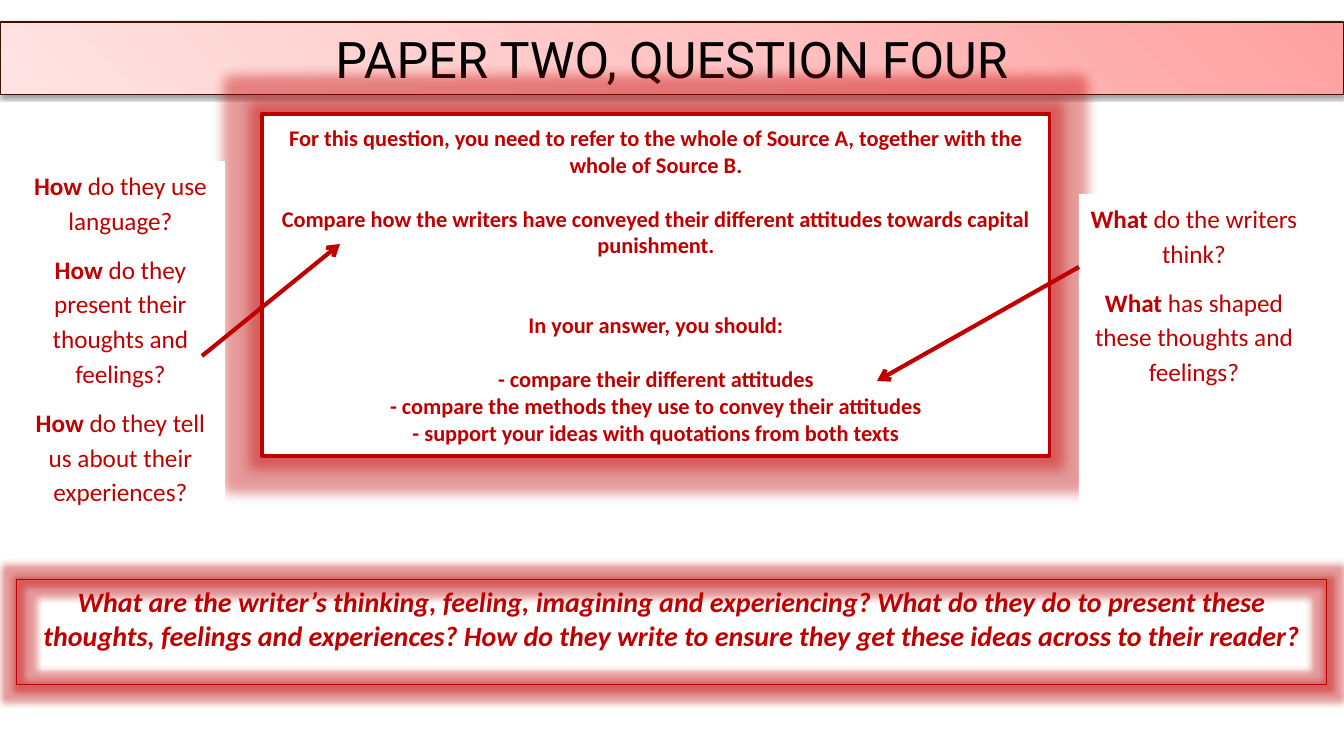
"""Build the 'Paper Two, Question Four' slide."""
from copy import deepcopy

from lxml import etree
from pptx import Presentation
from pptx.dml.color import RGBColor
from pptx.enum.shapes import MSO_CONNECTOR, MSO_SHAPE
from pptx.enum.text import MSO_ANCHOR, MSO_AUTO_SIZE, PP_ALIGN
from pptx.oxml import parse_xml
from pptx.oxml.ns import nsdecls, qn
from pptx.util import Pt

RECTANGLE = MSO_SHAPE.RECTANGLE
STRAIGHT = MSO_CONNECTOR.STRAIGHT
TOP, MIDDLE = MSO_ANCHOR.TOP, MSO_ANCHOR.MIDDLE
NO_AUTOFIT = MSO_AUTO_SIZE.NONE
CENTER = PP_ALIGN.CENTER

RED = RGBColor(0xC0, 0x00, 0x00)
WHITE = RGBColor(0xFF, 0xFF, 0xFF)
BLACK = RGBColor(0x00, 0x00, 0x00)
BROWN = RGBColor(0x3C, 0x13, 0x01)
BANNER_COLOURS = [
    RGBColor(0xFF, 0xA0, 0xA0),
    RGBColor(0xFF, 0xC5, 0xC5),
    RGBColor(0xFF, 0xE3, 0xE3),
]

TITLE = "PAPER TWO, QUESTION FOUR"
TITLE_BOX = (0, 22, 1344, 73)
SUMMARY = (
    "What are the writer’s thinking, feeling, imagining and experiencing? "
    "What do they do to present these thoughts, feelings and experiences? "
    "How do they write to ensure they get these ideas across to their reader?"
)
SUMMARY_BOX = (17, 580, 1310, 105)
TASK_BOX = (262, 114, 788, 342)
TASK_LINE_GAP = 19
TASK = [
    ("For this question, you need to refer to the whole of Source A, "
     "together with the whole of Source B.", 0),
    ("Compare how the writers have conveyed their different attitudes "
     "towards capital punishment.", 1),
    ("In your answer, you should:", 2),
    ("- compare their different attitudes", 1),
    ("- compare the methods they use to convey their attitudes", 0),
    ("- support your ideas with quotations from both texts", 0),
]
PROMPTS = [
    ((17, 161, 207, 351), "How", [
        " do they use language?",
        " do they present their thoughts and feelings?",
        " do they tell us about their experiences?",
    ]),
    ((1079, 194, 230, 325), "What", [
        " do the writers think?",
        " has shaped these thoughts and feelings?",
    ]),
]
ARROWS = [(202, 356, 340, 244), (1079, 267, 877, 381)]

SLIDE_WIDTH, SLIDE_HEIGHT = 1344, 756
PX_PER_INCH = 100.8
GLOW = '<a:glow rad="{}"><a:srgbClr val="C00000"><a:alpha val="40000"/></a:srgbClr></a:glow>'
BANNER_SHADOW = (
    '<a:outerShdw blurRad="39370" dist="20320" dir="5400000" rotWithShape="0">'
    '<a:srgbClr val="000000"><a:alpha val="38000"/></a:srgbClr></a:outerShdw>'
)


def px(*lengths):
    return [round(length * 914400 / PX_PER_INCH) for length in lengths]


def set_effects(shape, effects=""):
    shape._element.spPr.append(
        parse_xml(f'<a:effectLst {nsdecls("a")}>{effects}</a:effectLst>'))


def set_line(shape, colour, width):
    shape.line.color.rgb = colour
    shape.line.width = Pt(width)


def format_run(run, size, colour=RED, bold=False, italic=False, name="Calibri"):
    font = run.font
    font.name, font.size, font.bold, font.italic = name, Pt(size), bold, italic
    font.color.rgb = colour


def add_panel(slide, box, fill, line, width, anchor, effects=""):
    panel = slide.shapes.add_shape(RECTANGLE, *px(*box))
    if fill is None:
        panel.fill.background()
    else:
        panel.fill.solid()
        panel.fill.fore_color.rgb = fill
    set_line(panel, line, width)
    set_effects(panel, effects)
    panel.text_frame.word_wrap = True
    panel.text_frame.vertical_anchor = anchor
    return panel.text_frame


def add_paragraphs(frame, texts):
    frame.text = "\n".join(texts)
    for paragraph in frame.paragraphs:
        paragraph.alignment = CENTER
    return frame.paragraphs


def add_title(slide):
    banner = slide.shapes.title
    banner.left, banner.top, banner.width, banner.height = px(*TITLE_BOX)
    banner.fill.gradient()
    banner.fill.gradient_angle = 225
    stops = banner._element.spPr.find(".//" + qn("a:gsLst"))
    stops.append(deepcopy(stops[0]))
    for index, stop in enumerate(banner.fill.gradient_stops):
        stop.color.rgb = BANNER_COLOURS[index]
        stop.position = index / 2
    set_line(banner, BROWN, 0.75)
    set_effects(banner, BANNER_SHADOW)
    frame = banner.text_frame
    frame.auto_size = NO_AUTOFIT
    frame.vertical_anchor = MIDDLE
    heading = add_paragraphs(frame, [TITLE])[0]
    format_run(heading.runs[0], 36, BLACK, name="Roboto")


def add_summary(slide):
    frame = add_panel(slide, SUMMARY_BOX, None, RED, 0.75, TOP, GLOW.format(101600))
    summary = add_paragraphs(frame, [SUMMARY])[0]
    format_run(summary.runs[0], 20, bold=True, italic=True)


def add_task(slide):
    frame = add_panel(slide, TASK_BOX, WHITE, RED, 2.25, MIDDLE, GLOW.format(228600))
    paragraphs = add_paragraphs(frame, [text for text, _ in TASK])
    for paragraph, (_, gap_lines) in zip(paragraphs, TASK):
        paragraph.space_before = Pt(gap_lines * TASK_LINE_GAP)
        format_run(paragraph.runs[0], 16, bold=True)


def add_prompts(slide, box, question_word, endings):
    frame = add_panel(slide, box, WHITE, WHITE, 0.5, TOP)
    paragraphs = add_paragraphs(frame, [question_word] * len(endings))
    for paragraph, ending in zip(paragraphs, endings):
        paragraph.line_spacing = 1.15
        paragraph.space_after = Pt(10)
        format_run(paragraph.runs[0], 18, bold=True)
        rest = paragraph.add_run()
        rest.text = ending
        format_run(rest, 18)


def add_arrow(slide, ends):
    arrow = slide.shapes.add_connector(STRAIGHT, *px(*ends))
    set_line(arrow, RED, 3)
    etree.SubElement(arrow.line._get_or_add_ln(), qn("a:tailEnd"), type="arrow")
    set_effects(arrow)


def main():
    deck = Presentation()
    deck.slide_width, deck.slide_height = px(SLIDE_WIDTH, SLIDE_HEIGHT)
    slide = deck.slides.add_slide(deck.slide_layouts[5])
    add_title(slide)
    add_summary(slide)
    add_task(slide)
    for box, question_word, endings in PROMPTS:
        add_prompts(slide, box, question_word, endings)
    for ends in ARROWS:
        add_arrow(slide, ends)
    deck.save("out.pptx")


if __name__ == "__main__":
    main()
